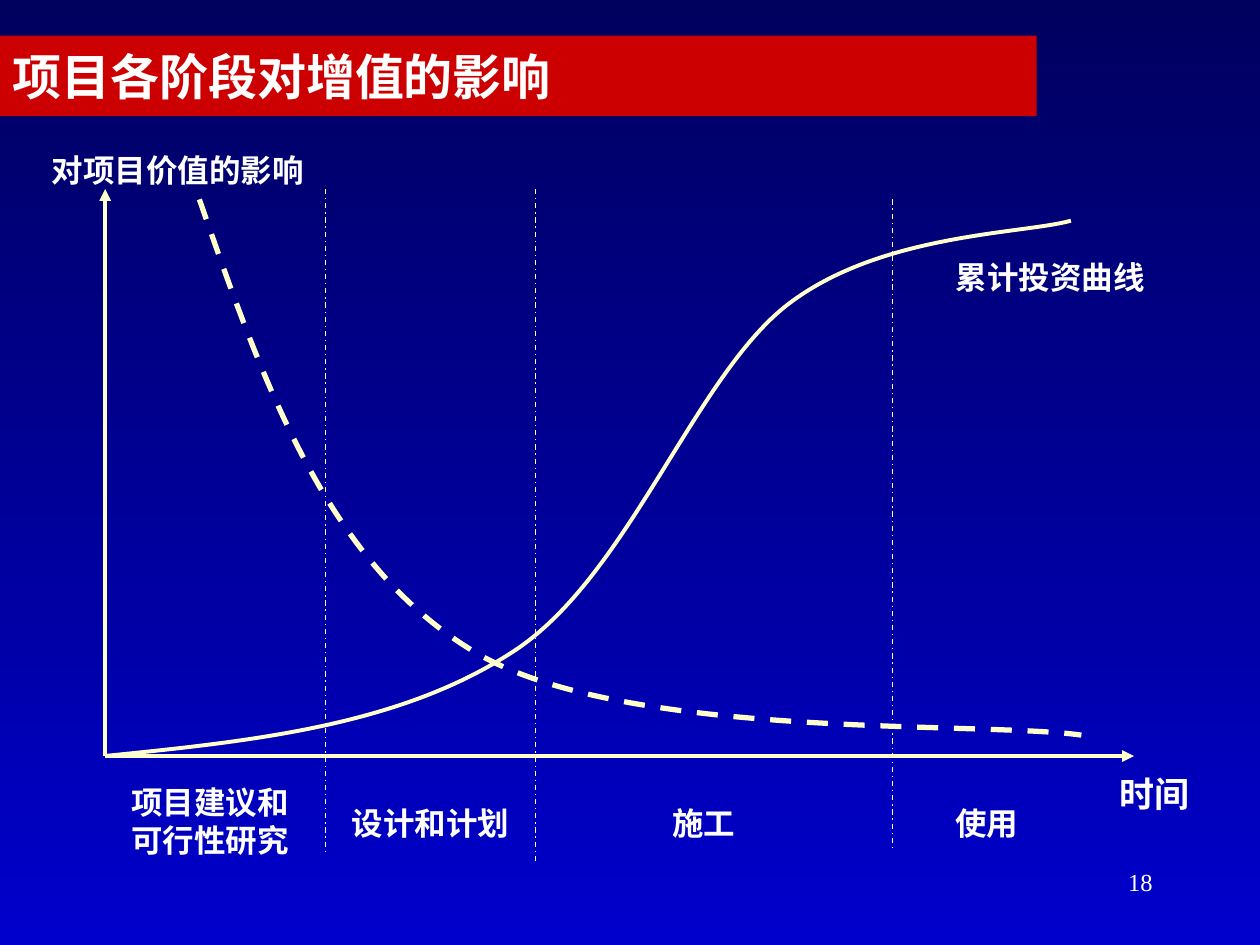
from lxml.etree import SubElement
from pptx import Presentation
from pptx.dml.color import RGBColor
from pptx.enum.dml import MSO_LINE as Dash
from pptx.enum.shapes import MSO_CONNECTOR as Link
from pptx.enum.text import MSO_ANCHOR as Anchor, MSO_AUTO_SIZE as Fit, PP_ALIGN as Align
from pptx.oxml.ns import qn
from pptx.util import Cm, Pt

WHITE = RGBColor(0xFF, 0xFF, 0xFF)
CREAM = RGBColor(0xFF, 0xFF, 0xCC)
RED = RGBColor(0xCC, 0x00, 0x00)
NAVY = RGBColor(0x00, 0x00, 0x5E)
BLUE = RGBColor(0x00, 0x00, 0xCC)
SANS = "Noto Sans CJK SC"
SERIF = "Times New Roman"


class Deck:
    """Holds the style and the current slide, and draws each kind of element."""

    def __init__(self):
        self.prs = Presentation()
        self.prs.slide_width, self.prs.slide_height = Cm(25.4), Cm(19.05)
        self.slide = self.prs.slides.add_slide(self.prs.slide_layouts[5])
        self.shapes = self.slide.shapes

    def back(self, top, base):
        fill = self.slide.background.fill
        fill.gradient()
        fill.gradient_angle = 270
        for stop, tint, spot in zip(fill.gradient_stops, (top, base), (0, 1)):
            stop.color.rgb, stop.position = tint, spot

    def fill_text(self, frame, text, size, align, face=SANS, bold=True):
        frame.word_wrap, frame.auto_size = True, Fit.NONE
        frame.text = text
        para = frame.paragraphs[0]
        para.alignment = align
        font = para.font
        font.size, font.bold, font.name = Pt(size), bold, face
        font.color.rgb = WHITE
        SubElement(font._rPr, qn("a:ea"), typeface=face)

    def title(self, text, x, y, w, h):
        bar = self.shapes.title
        bar.left, bar.top, bar.width, bar.height = Cm(x), Cm(y), Cm(w), Cm(h)
        bar.fill.solid()
        bar.fill.fore_color.rgb = RED
        self.fill_text(bar.text_frame, text, 28, Align.LEFT)
        bar.text_frame.vertical_anchor = Anchor.MIDDLE

    def label(self, text, x, y, w, h, size=18, align=Align.CENTER, **style):
        box = self.shapes.add_textbox(Cm(x), Cm(y), Cm(w), Cm(h))
        self.fill_text(box.text_frame, text, size, align, **style)

    def stroke(self, shape, width, dash=None):
        shape.line.color.rgb = CREAM
        shape.line.width = Pt(width)
        if dash:
            shape.line.dash_style = dash

    def rule(self, x1, y1, x2, y2, width, dash=None, arrow=False):
        link = self.shapes.add_connector(Link.STRAIGHT, Cm(x1), Cm(y1), Cm(x2), Cm(y2))
        self.stroke(link, width, dash)
        if arrow:
            SubElement(link.line._get_or_add_ln(), qn("a:tailEnd"), type="triangle")
        SubElement(link._element.spPr, qn("a:effectLst"))

    def curve(self, spots, width, dash=None):
        start, *rest = [(Cm(x), Cm(y)) for x, y in spots]
        pen = self.shapes.build_freeform(*start)
        pen.add_line_segments(rest, close=False)
        shape = pen.convert_to_shape()
        shape.shadow.inherit = False
        shape.fill.background()
        self.stroke(shape, width, dash)
        track = shape._element.find(".//" + qn("a:path"))
        steps = track.findall(qn("a:lnTo"))
        for i in range(0, len(steps), 3):
            bend = SubElement(track, qn("a:cubicBezTo"))
            for step in steps[i:i + 3]:
                bend.append(step[0])
                track.remove(step)


def main():
    deck = Deck()
    deck.back(NAVY, BLUE)
    deck.title("项目各阶段对增值的影响", 0, 0.72, 20.9, 1.62)

    left, base, top = 2.12, 15.24, 3.81
    deck.rule(left, base, 22.86, base, 2.25, arrow=True)
    deck.rule(left, base, left, top, 2.25, arrow=True)
    for x, y1, y2 in ((6.56, top, 17.15), (10.8, top, 17.36), (17.99, 4.02, 17.15)):
        deck.rule(x, y1, x, y2, 0.75, Dash.DASH_DOT)

    deck.curve([(4.02, 4.02), (5.29, 7.67), (6.56, 11.32), (9.53, 13.12),
                (12.49, 14.94), (19.76, 14.53), (21.8, 14.82)], 3, Dash.DASH)
    deck.curve([(left, base), (5.1, 14.94), (8.08, 14.63), (10.37, 13.12),
                (12.67, 11.61), (14, 7.59), (15.88, 6.14),
                (17.75, 4.7), (20.62, 4.72), (21.59, 4.45)], 2.25)

    deck.label("对项目价值的影响", 0, 2.92, 7.16, 1.02)
    deck.label("累计投资曲线", 18.85, 5.08, 4.65, 1.35)
    deck.label("时间", 21.59, 15.45, 3.39, 1.12, size=20)
    deck.label("项目建议和可行性研究", 2.33, 15.66, 3.81, 2.49)
    for text, x in (("设计和计划", 6.77), ("施工", 12.28), ("使用", 17.99)):
        deck.label(text, x, 16.09, 3.81, 1.02)
    deck.label("18", 18.21, 17.36, 5.28, 1.27, size=14, align=Align.RIGHT,
               face=SERIF, bold=False)
    deck.prs.save("out.pptx")


if __name__ == "__main__":
    main()
